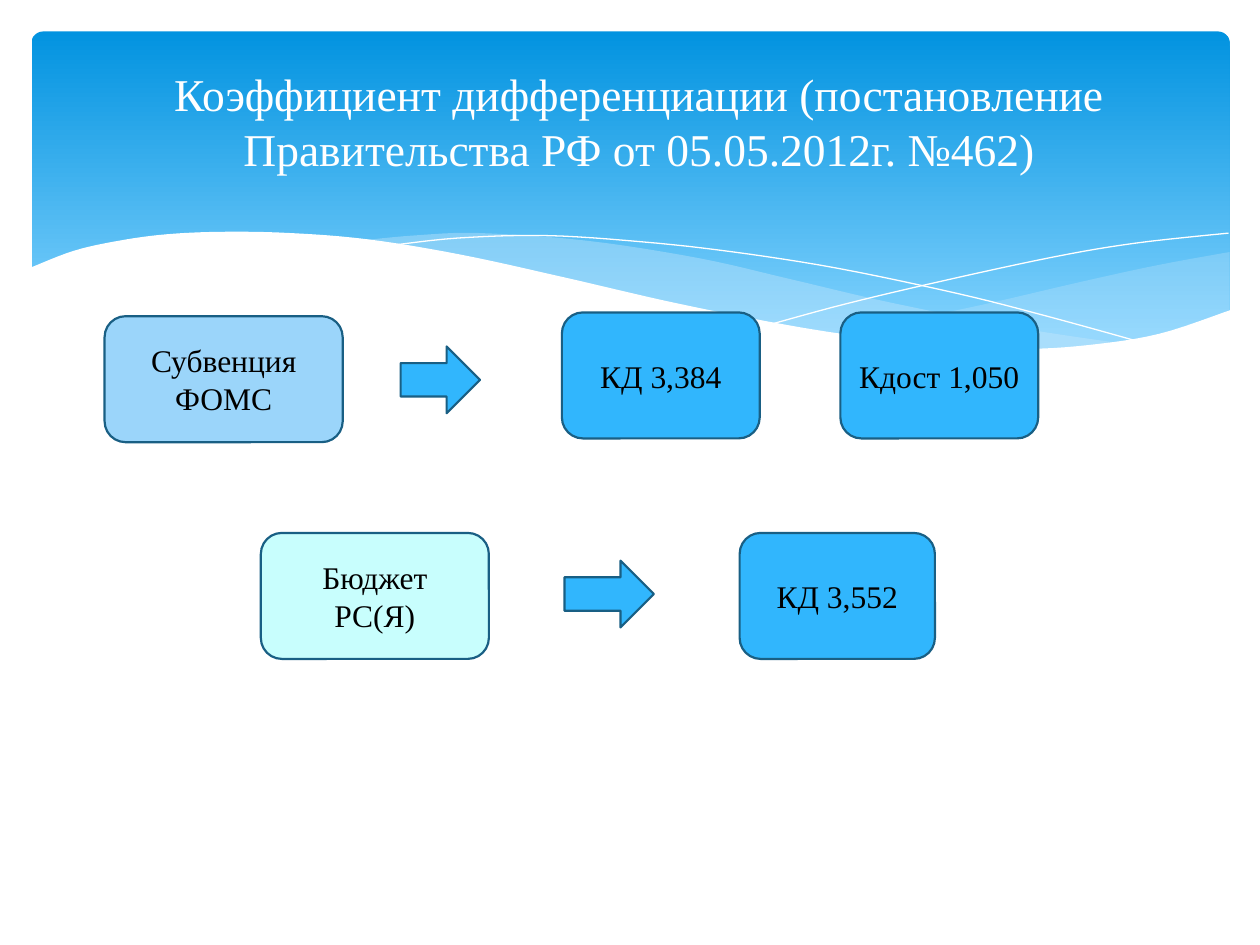
from lxml.etree import SubElement as Sub
from pptx import Presentation
from pptx.dml.color import RGBColor
from pptx.enum.shapes import MSO_SHAPE as Kind
from pptx.enum.text import MSO_ANCHOR as Anchor, PP_ALIGN as Align
from pptx.oxml.ns import qn
from pptx.util import Inches, Pt

WIDE, HIGH = Inches(10), Inches(7.5)
COL, ROW = WIDE / 100, HIGH / 75
FONT = "Times New Roman"
WHITE = RGBColor(0xFF, 0xFF, 0xFF)
BLACK = RGBColor(0x00, 0x00, 0x00)
DEEP = RGBColor(0x02, 0x93, 0xE0)
LIGHT = RGBColor(0x83, 0xD3, 0xFE)
MIST = RGBColor(0xC6, 0xE7, 0xFC)
BLUE = RGBColor(0x31, 0xB6, 0xFD)
PALE = RGBColor(0x9B, 0xD5, 0xFA)
AQUA = RGBColor(0xC8, 0xFE, 0xFD)
EDGE = RGBColor(0x19, 0x5F, 0x84)

RIGHT = [
    [(97.6, 20), (92.1, 21), (86.1, 22.3), (77.9, 24.2), (70.6, 25.7), (66.1, 26.5)],
    [(66.1, 26.5), (71.9, 27.2), (76.9, 27.7), (82.4, 27.7),
     (87.2, 27.4), (92.1, 26.5), (97.6, 24.7)],
]
MIDDLE = [
    [(89.3, 27.3), (80.7, 26), (70.6, 24), (62.9, 22.2), (55.5, 20.5),
     (46.5, 19.1), (38, 18.5), (32.8, 18.7), (28.6, 19.1)],
    [(28.6, 19.1), (36.2, 20.3), (44.9, 22.2), (53, 24), (60.1, 25.5),
     (68, 26.8), (74.8, 27.6), (81.8, 27.8), (89.3, 27.3)],
]
FRONT = [
    [(97.7, 24.6), (92, 26.5), (86.3, 27.4), (80.9, 27.7), (74.4, 27.4),
     (66.8, 26.5), (60.3, 25.4), (52.9, 23.9), (44.7, 22), (36.5, 20.2),
     (29.2, 19), (23, 18.5), (17.7, 18.4), (13.2, 18.6), (9.5, 19.1),
     (5.9, 19.9), (2.3, 21.3)],
    [(2.3, 32.9), (97.7, 32.9)],
]
FALL = [[(30.9, 19.5), (36.3, 18.9), (43.3, 18.7), (51, 19.2), (58.2, 20),
         (66.5, 21.3), (76, 23.3), (83.1, 25.1), (90.7, 27.2)]]
RISE = [[(61.3, 25.7), (67.2, 24.1), (74.8, 22.3), (83.6, 20.4), (90.1, 19.3), (97.5, 18.5)]]


def smooth(knots, steps=6):
    """Return points on a Catmull-Rom curve through the knots."""
    ends = [knots[0], *knots, knots[-1]]
    dots = []
    for a, b, c, d in zip(ends, ends[1:], ends[2:], ends[3:]):
        for t in (i / steps for i in range(steps)):
            dots.append(tuple(
                q + t * (r - p + t * (2 * p - 5 * q + 4 * r - s + t * (3 * (q - r) + s - p))) / 2
                for p, q, r, s in zip(a, b, c, d)))
    return dots + [knots[-1]]


def draw(slide, curves, closed):
    """Draw one outline made of smooth curves."""
    first, *rest = [(x * COL, y * ROW) for knots in curves for x, y in smooth(knots)]
    pen = slide.shapes.build_freeform(*first)
    pen.add_line_segments(rest, close=closed)
    shape = pen.convert_to_shape()
    shape.shadow.inherit = False
    return shape


def add_wave(slide, curves, color, alpha=100):
    """Add a filled wave with the given opacity in percent."""
    wave = draw(slide, curves, True)
    wave.fill.solid()
    wave.fill.fore_color.rgb = color
    wave.line.fill.background()
    if alpha < 100:
        tint = wave.fill._xPr.find(qn("a:solidFill"))[0]
        Sub(tint, qn("a:alpha")).set("val", str(alpha * 1000))


def add_thread(slide, curves):
    """Add a white hairline curve."""
    thread = draw(slide, curves, False)
    thread.fill.background()
    thread.line.color.rgb = WHITE
    thread.line.width = Pt(0)


def add_shape(slide, kind, x, y, wide, high):
    """Add a preset shape placed in grid cells."""
    box = (round(n) for n in (x * COL, y * ROW, wide * COL, high * ROW))
    shape = slide.shapes.add_shape(kind, *box)
    shape.shadow.inherit = False
    return shape


def add_band(slide):
    """Add the header gradient band."""
    band = add_shape(slide, Kind.ROUNDED_RECTANGLE, 2.5, 2.5, 95.1, 27)
    band.adjustments[0] = 0.034
    band.line.fill.background()
    band.fill.gradient()
    band.fill.gradient_angle = 270
    for stop, place, color in zip(band.fill.gradient_stops, (0, 0.9), (DEEP, LIGHT)):
        stop.position = place
        stop.color.rgb = color


def set_text(shape, text, size, color):
    """Write centred text into a shape."""
    frame = shape.text_frame
    frame.text = text
    frame.word_wrap = True
    frame.vertical_anchor = Anchor.MIDDLE
    para = frame.paragraphs[0]
    para.alignment = Align.CENTER
    font = para.runs[0].font
    font.name, font.size, font.color.rgb = FONT, Pt(size), color


def add_node(slide, kind, x, y, wide, high, fill=BLUE, text=None):
    """Add an outlined box or arrow of the scheme."""
    node = add_shape(slide, kind, x, y, wide, high)
    node.fill.solid()
    node.fill.fore_color.rgb = fill
    node.line.color.rgb = EDGE
    node.line.width = Pt(1.25)
    if text:
        set_text(node, text, 18, BLACK)


def add_box(slide, x, y, wide, fill, text):
    """Add a rounded box of the common height."""
    add_node(slide, Kind.ROUNDED_RECTANGLE, x, y, wide, 10, fill, text)


def add_arrow(slide, x, y, wide):
    """Add a block arrow of the common height."""
    add_node(slide, Kind.RIGHT_ARROW, x, y, wide, 5.3)


def set_title(slide, text):
    """Place the title above the header artwork."""
    title = slide.shapes.title
    title.left, title.top = round(5 * COL), round(3.7 * ROW)
    title.width, title.height = round(91.5 * COL), round(11.8 * ROW)
    set_text(title, text, 26, WHITE)
    slide.shapes._spTree.append(title._element)


def main():
    """Build and save the slide."""
    deck = Presentation()
    deck.slide_width, deck.slide_height = WIDE, HIGH
    slide = deck.slides.add_slide(deck.slide_layouts[5])
    add_band(slide)
    add_wave(slide, RIGHT, MIST, 29)
    add_wave(slide, MIDDLE, MIST, 40)
    add_thread(slide, FALL)
    add_thread(slide, RISE)
    add_wave(slide, FRONT, WHITE)
    set_title(slide, "Коэффициент дифференциации (постановление "
                     "Правительства РФ от 05.05.2012г. №462)")
    add_box(slide, 8.3, 25.1, 18.9, PALE, "Субвенция ФОМС")
    add_arrow(slide, 31.8, 27.5, 6.3)
    for x, text in ((44.6, "КД 3,384"), (66.7, "Кдост 1,050")):
        add_box(slide, x, 24.8, 15.7, BLUE, text)
    add_box(slide, 20.7, 42.3, 18.1, AQUA, "Бюджет РС(Я)")
    add_arrow(slide, 44.8, 44.5, 7.1)
    add_box(slide, 58.7, 42.3, 15.5, BLUE, "КД 3,552")
    deck.save("out.pptx")


if __name__ == "__main__":
    main()
